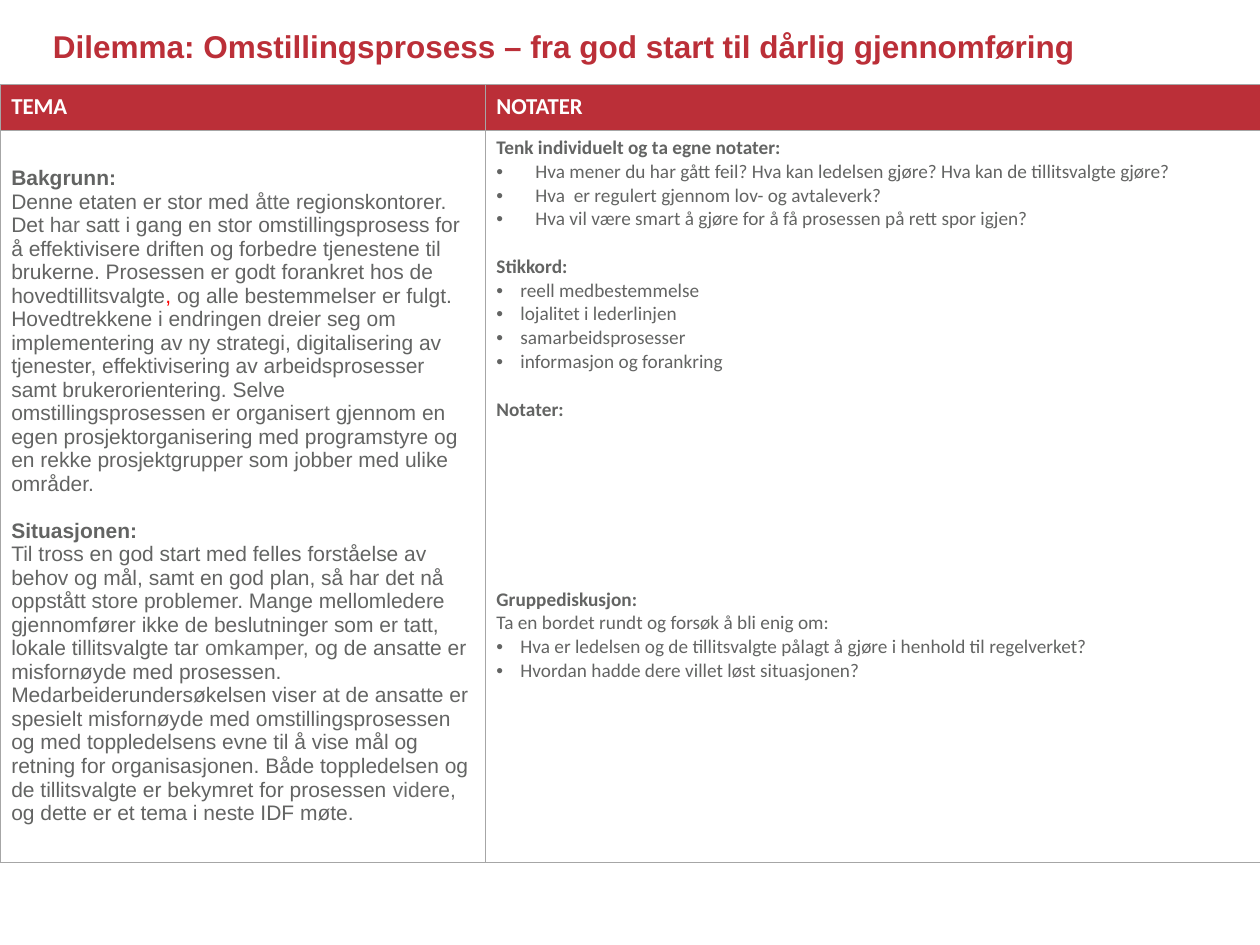
from dataclasses import dataclass

from lxml import etree
from pptx import Presentation
from pptx.dml.color import RGBColor
from pptx.enum import text
from pptx.oxml import ns
from pptx.util import Inches, Pt

RED, WHITE, GREY, LIGHT_GREY = "BB2F38", "FFFFFF", "636463", "6A6B6A"
COMMA_RED, BORDER = "FF0000", "A6A6A6"


@dataclass
class Span:
    wording: str
    colour: str = GREY


@dataclass
class Line:
    spans: list[Span]
    bold: bool = False
    indent: float = 0
    before: float = 0


@dataclass
class Style:
    face: str
    size: float


def rgb(value: str) -> RGBColor:
    return RGBColor.from_string(value)


def heading(wording: str, before: float = 0, colour: str = GREY) -> Line:
    return Line([Span(wording, colour)], bold=True, before=before)


def bullets(indent: float, *wordings: str) -> list[Line]:
    return [Line([Span(wording)], indent=indent) for wording in wordings]


def add_bullet(paragraph, indent: float) -> None:
    properties = paragraph._p.get_or_add_pPr()
    properties.set("marL", str(Inches(indent)))
    properties.set("indent", str(-Inches(indent)))
    etree.SubElement(properties, ns.qn("a:buFont")).set("typeface", "Arial")
    etree.SubElement(properties, ns.qn("a:buChar")).set("char", "•")


def write_lines(frame, lines: list[Line], style: Style) -> None:
    for index, line in enumerate(lines):
        paragraph = frame.add_paragraph() if index else frame.paragraphs[0]
        if line.before:
            paragraph.space_before = Pt(line.before)
        if line.indent:
            add_bullet(paragraph, line.indent)
        paragraph.font.name = style.face
        paragraph.font.size = Pt(style.size)
        paragraph.font.bold = line.bold
        for span in line.spans:
            run = paragraph.add_run()
            run.text = span.wording
            run.font.color.rgb = rgb(span.colour)


def add_borders(cell) -> None:
    properties = cell._tc.get_or_add_tcPr()
    for position, side in enumerate(("lnL", "lnR", "lnT", "lnB")):
        border = etree.Element(ns.qn(f"a:{side}"), w=str(Pt(0.25)))
        fill = etree.SubElement(border, ns.qn("a:solidFill"))
        etree.SubElement(fill, ns.qn("a:srgbClr"), val=BORDER)
        properties.insert(position, border)


def fill_cell(cell, lines: list[Line], style: Style, fill: str, anchor) -> None:
    cell.fill.solid()
    cell.fill.fore_color.rgb = rgb(fill)
    cell.vertical_anchor = anchor
    cell.margin_left = cell.margin_right = Inches(0.09)
    cell.margin_top = cell.margin_bottom = Inches(0.05)
    add_borders(cell)
    write_lines(cell.text_frame, lines, style)


THEME = [
    heading("Bakgrunn:"),
    Line([
        Span("Denne etaten er stor med "),
        Span("åtte", LIGHT_GREY),
        Span(" regionskontorer. Det "),
        Span("har ", LIGHT_GREY),
        Span("satt i gang en stor omstillingsprosess for å effektivisere driften og "
             "forbedre tjenestene til brukerne. Prosessen er godt forankret hos de "
             "hovedtillitsvalgte"),
        Span(",", COMMA_RED),
        Span(" og alle bestemmelser er fulgt. Hovedtrekkene i endringen dreier seg om "
             "implementering av ny strategi, digitalisering av tjenester, effektivisering "
             "av arbeidsprosesser samt brukerorientering. Selve omstillingsprosessen er "
             "organiser"),
        Span("t", LIGHT_GREY),
        Span(" gjennom en egen prosjektorganisering med programstyre og en rekke "
             "prosjektgrupper som jobber med ulike områder."),
    ]),
    heading("Situasjonen:", before=13.4),
    Line([
        Span("Til tross en god start med felles forståelse av behov og mål, samt en god "
             "plan, så har det nå oppstått store problemer. Mange mellomledere gjennomfører "
             "ikke de beslutninger som er tatt, lokale tillitsvalgte tar "),
        Span("omkamper, ", LIGHT_GREY),
        Span("og de ansatte er misfornøyde med prosessen. Medarbeiderundersøkelsen viser at "
             "de ansatte er spesielt misfornøyde med omstillingsprosessen og med "
             "toppledelsens evne til å vise mål og retning for organisasjonen. Både "
             "toppledelsen og de tillitsvalgte er bekymret for prosessen "),
        Span("videre, ", LIGHT_GREY),
        Span("og dette er et tema i neste IDF møte."),
    ]),
]

NOTES = [
    heading("Tenk individuelt og ta egne notater:"),
    *bullets(
        0.31,
        "Hva mener du har gått feil? Hva kan ledelsen gjøre? Hva kan de tillitsvalgte gjøre?",
        "Hva  er regulert gjennom lov- og avtaleverk?",
        "Hva vil være smart å gjøre for å få prosessen på rett spor igjen?",
    ),
    heading("Stikkord:", before=13.6),
    *bullets(
        0.19,
        "reell medbestemmelse",
        "lojalitet i lederlinjen",
        "samarbeidsprosesser",
        "informasjon og forankring",
    ),
    heading("Notater:", before=13.6),
    heading("Gruppediskusjon:", before=95),
    Line([Span("Ta en bordet rundt og forsøk å bli enig om:")]),
    *bullets(
        0.19,
        "Hva er ledelsen og de tillitsvalgte pålagt å gjøre i henhold til regelverket?",
        "Hvordan hadde dere villet løst situasjonen?",
    ),
]


def add_title(slide) -> None:
    title = slide.shapes.title
    title.left, title.top = Inches(0.32), Inches(0.25)
    title.width, title.height = Inches(9), Inches(0.61)
    frame = title.text_frame
    frame.word_wrap = True
    frame.auto_size = text.MSO_AUTO_SIZE.NONE
    frame.vertical_anchor = text.MSO_ANCHOR.TOP
    frame.margin_top = frame.margin_bottom = 0
    frame.paragraphs[0].alignment = text.PP_ALIGN.LEFT
    frame.paragraphs[0].line_spacing = 0.9
    wording = "Dilemma: Omstillingsprosess – fra god start til dårlig gjennomføring"
    write_lines(frame, [heading(wording, colour=RED)], Style("Arial", 18))


def add_dilemma_table(slide) -> None:
    table = slide.shapes.add_table(
        2, 2, 0, Inches(0.67), Inches(10), Inches(6.18)).table
    table.horz_banding = False
    for column, width in zip(table.columns, (3.85, 6.15)):
        column.width = Inches(width)
    for row, height in zip(table.rows, (0.36, 5.81)):
        row.height = Inches(height)
    middle, top = text.MSO_ANCHOR.MIDDLE, text.MSO_ANCHOR.TOP
    for column, label in enumerate(("TEMA", "NOTATER")):
        fill_cell(table.cell(0, column), [heading(label, colour=WHITE)],
                  Style("Calibri", 13), RED, middle)
    fill_cell(table.cell(1, 0), THEME, Style("Arial", 12), WHITE, middle)
    fill_cell(table.cell(1, 1), NOTES, Style("Calibri", 11), WHITE, top)


def main() -> None:
    presentation = Presentation()
    presentation.slide_width, presentation.slide_height = Inches(10), Inches(7.5)
    slide = presentation.slides.add_slide(presentation.slide_layouts[5])
    add_title(slide)
    add_dilemma_table(slide)
    presentation.save("out.pptx")


if __name__ == "__main__":
    main()
